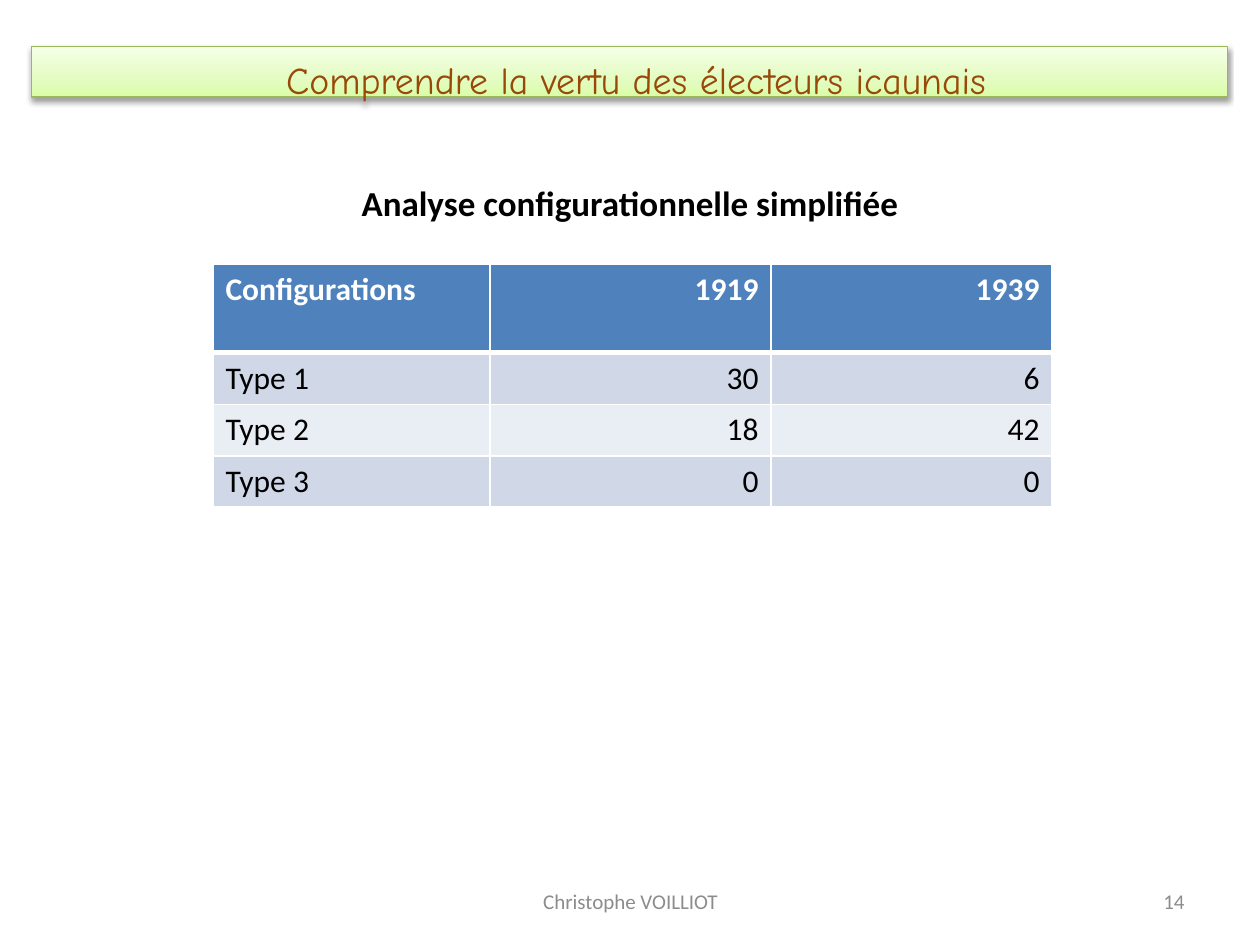
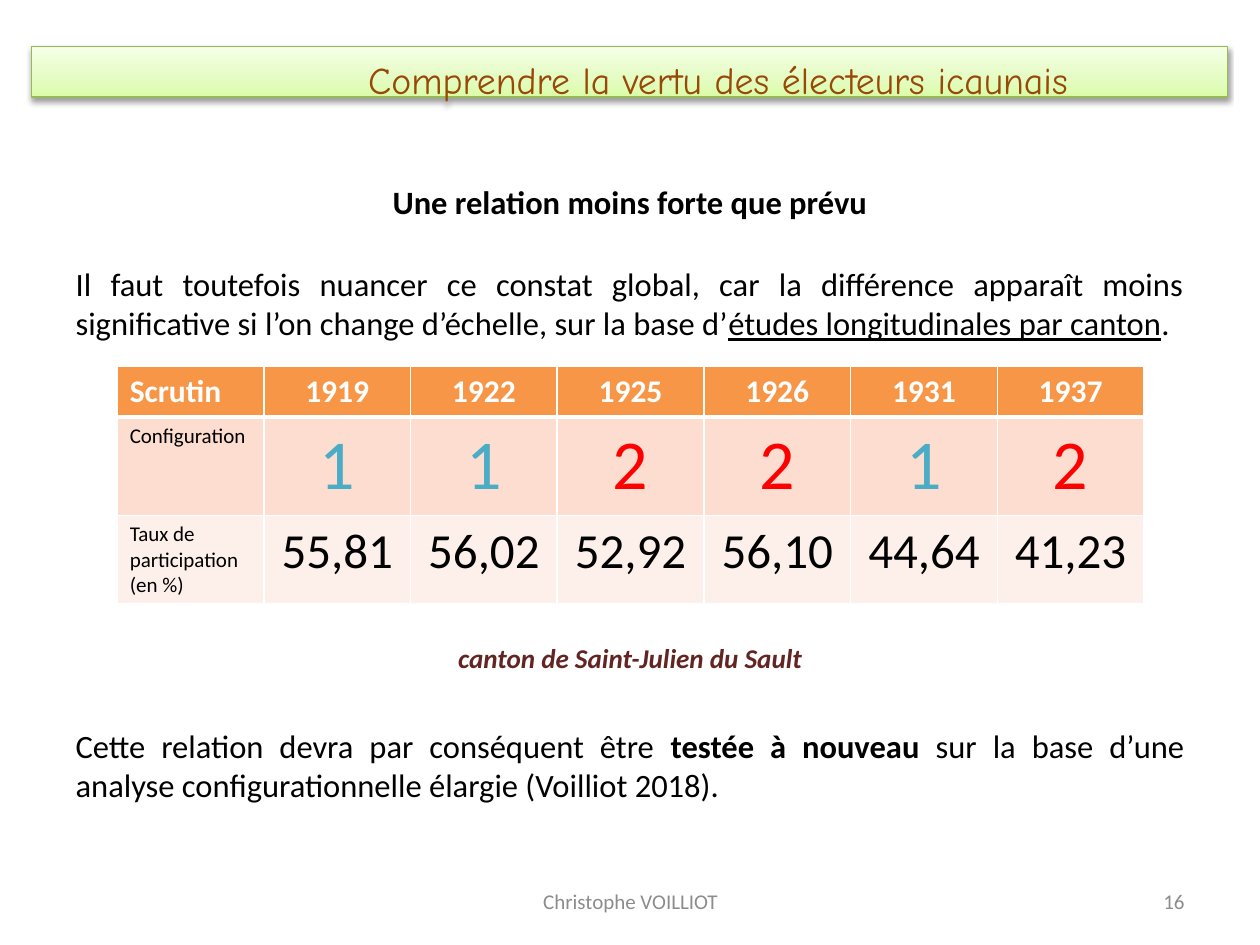
from copy import deepcopy
from dataclasses import dataclass

from pptx import Presentation
from pptx.dml.color import RGBColor
from pptx.enum.text import MSO_ANCHOR, MSO_AUTO_SIZE, PP_ALIGN
from pptx.oxml import parse_xml
from pptx.oxml.ns import nsdecls
from pptx.util import Inches, Pt

LEFT, CENTER, RIGHT, JUSTIFY = PP_ALIGN.LEFT, PP_ALIGN.CENTER, PP_ALIGN.RIGHT, PP_ALIGN.JUSTIFY
TOP, MIDDLE = MSO_ANCHOR.TOP, MSO_ANCHOR.MIDDLE
NO_AUTOFIT = MSO_AUTO_SIZE.NONE
TITLE_AND_CONTENT = 1


@dataclass(frozen=True)
class Theme:
    body_font: str = "Calibri"
    title_font: str = "Comic Neue"
    text: str = "000000"
    white: str = "FFFFFF"
    title: str = "984807"
    footer: str = "8C8C8C"
    caption: str = "632523"
    type_1: str = "4BACC6"
    type_2: str = "FF0000"
    band_line: str = "98B955"
    band_stops: tuple = ((0, "DAFDA7"), (0.35, "E4FCC2"), (1, "F5FFE7"))
    blue_table: tuple = ("4F81BD", "D0D8E8", "E9EDF4")
    orange_table: tuple = ("F79646", "FCDDCF", "FDEFE9")
    title_size: float = 21.6
    heading_size: float = 20
    body_size: float = 18.6
    caption_size: float = 15.5
    table_size: float = 18
    small_size: float = 12
    rate_size: float = 28
    type_size: float = 40


THEME = Theme()
TITLE_BOX = (0.25, 0.37, 9.49, 0.4)
BODY_BOX = (0.5, 1.39, 9, 4.95)
AUTHOR_BOX = (3.42, 6.95, 3.17, 0.4)
NUMBER_BOX = (7.17, 6.95, 2.33, 0.4)


def apply(target, values):
    for name, value in values.items():
        setattr(target, name, value)


def place(shape, box):
    apply(shape, dict(zip(("left", "top", "width", "height"), map(Inches, box))))


def add_run(paragraph, text, size, color=THEME.text, font=THEME.body_font, **styles):
    run = paragraph.add_run()
    run.text = text
    apply(run.font, {"name": font, "size": Pt(size), "bold": False, **styles})
    run.font.color.rgb = RGBColor.from_string(color)


def add_title(slide, text, left_inset):
    """Fill the title placeholder and give it the green shaded band."""
    title = slide.shapes.title
    place(title, TITLE_BOX)
    title.fill.gradient()
    title.fill.gradient_angle = 90
    stops = title.fill.gradient_stops
    first_stop = stops[0]._element
    first_stop.addnext(deepcopy(first_stop))
    for stop, (position, color) in zip(title.fill.gradient_stops, THEME.band_stops):
        stop.position = position
        stop.color.rgb = RGBColor.from_string(color)
    title.line.color.rgb = RGBColor.from_string(THEME.band_line)
    title.line.width = Pt(0.75)
    title._element.spPr.append(parse_xml(
        f'<a:effectLst {nsdecls("a")}><a:outerShdw blurRad="{Pt(3.1)}" dist="{Pt(1.6)}" '
        'dir="5400000" rotWithShape="0"><a:srgbClr val="000000"><a:alpha val="38000"/>'
        '</a:srgbClr></a:outerShdw></a:effectLst>'))
    frame = title.text_frame
    apply(frame, {"auto_size": NO_AUTOFIT, "vertical_anchor": TOP, "word_wrap": True,
                  "margin_left": Inches(left_inset), "margin_right": Inches(0.1),
                  "margin_top": Inches(0.08), "margin_bottom": 0})
    frame.paragraphs[0].alignment = CENTER
    add_run(frame.paragraphs[0], text, THEME.title_size, THEME.title, THEME.title_font)


def add_body(slide, paragraphs):
    """Fill the body with (alignment, points before, runs) paragraphs, unbulleted."""
    body = slide.placeholders[1]
    place(body, BODY_BOX)
    frame = body.text_frame
    apply(frame, {"auto_size": NO_AUTOFIT, "vertical_anchor": TOP, "word_wrap": True})
    for index, (alignment, before, runs) in enumerate(paragraphs):
        paragraph = frame.add_paragraph() if index else frame.paragraphs[0]
        apply(paragraph, {"alignment": alignment, "space_before": Pt(before)})
        properties = paragraph._p.get_or_add_pPr()
        properties.set("marL", "0")
        properties.set("indent", "0")
        properties.append(parse_xml(f'<a:buNone {nsdecls("a")}/>'))
        for text, size, styles in runs:
            add_run(paragraph, text, size, **styles)


def add_footer(slide, number):
    for box, text, alignment in ((AUTHOR_BOX, "Christophe VOILLIOT", CENTER),
                                 (NUMBER_BOX, str(number), RIGHT)):
        frame = slide.shapes.add_textbox(*map(Inches, box)).text_frame
        apply(frame, {"word_wrap": True, "vertical_anchor": MIDDLE})
        frame.paragraphs[0].alignment = alignment
        add_run(frame.paragraphs[0], text, THEME.small_size, THEME.footer)


def set_borders(cell, row):
    """Draw white borders, thicker between the header and the first row."""
    widths = {"L": 1, "R": 1, "T": 3 if row == 1 else 1, "B": 3 if row == 0 else 1}
    for side, width in widths.items():
        cell._tc.get_or_add_tcPr().append(parse_xml(
            f'<a:ln{side} {nsdecls("a")} w="{Pt(width)}"><a:solidFill>'
            f'<a:srgbClr val="{THEME.white}"/></a:solidFill></a:ln{side}>'))


def add_data_table(slide, origin, widths, heights, rows, fills, value_alignment, cell_style):
    """Build a banded table; cell_style(row, column, text) gives size and colour of body cells."""
    box = (*origin, sum(widths), sum(heights))
    table = slide.shapes.add_table(len(rows), len(widths), *map(Inches, box)).table
    for column, width in zip(table.columns, widths):
        column.width = Inches(width)
    for line, height in zip(table.rows, heights):
        line.height = Inches(height)
    header_fill, *band_fills = fills
    for r, values in enumerate(rows):
        fill = band_fills[(r - 1) % 2] if r else header_fill
        for c, text in enumerate(values):
            cell = table.cell(r, c)
            set_borders(cell, r)
            cell.fill.solid()
            cell.fill.fore_color.rgb = RGBColor.from_string(fill)
            paragraph = cell.text_frame.paragraphs[0]
            paragraph.alignment = value_alignment if c else LEFT
            size, color = cell_style(r, c, text) if r else (THEME.table_size, THEME.white)
            add_run(paragraph, text, size, color, bold=r == 0)


def plain_style(row, column, text):
    return THEME.table_size, THEME.text


def canton_style(row, column, text):
    if column == 0:
        return THEME.small_size, THEME.text
    if row == 1:
        return THEME.type_size, THEME.type_1 if text == "1" else THEME.type_2
    return THEME.rate_size, THEME.text


def add_base_slide(deck, number, title_inset, paragraphs):
    slide = deck.slides.add_slide(deck.slide_layouts[TITLE_AND_CONTENT])
    add_title(slide, "Comprendre la vertu des électeurs icaunais", title_inset)
    add_body(slide, paragraphs)
    add_footer(slide, number)
    return slide


def build_configurations_slide(deck):
    heading = ("Analyse configurationnelle simplifiée", THEME.heading_size, {"bold": True})
    slide = add_base_slide(deck, 14, 0.21, [(CENTER, 1, [heading])])
    rows = [("Configurations", "1919", "1939"),
            ("Type 1", "30", "6"),
            ("Type 2", "18", "42"),
            ("Type 3", "0", "0")]
    add_data_table(slide, (1.69, 2.1), (2.2, 2.23, 2.23), (0.7, 0.41, 0.41, 0.4),
                   rows, THEME.blue_table, RIGHT, plain_style)


def build_canton_slide(deck):
    size = THEME.body_size
    paragraphs = [
        (CENTER, 1, [("Une relation moins forte que prévu", size, {"bold": True})]),
        (JUSTIFY, 25, [
            ("Il faut toutefois nuancer ce constat global, car la différence apparaît moins "
             "significative si l’on change d’échelle, sur la base d’", size, {}),
            ("études longitudinales par canton", size, {"underline": True}),
            (".", size, {})]),
        (CENTER, 171, [("canton de Saint-Julien du Sault", THEME.caption_size,
                        {"color": THEME.caption, "bold": True, "italic": True})]),
        (JUSTIFY, 29.5, [
            ("Cette relation devra par conséquent être ", size, {}),
            ("testée à nouveau ", size, {"bold": True}),
            ("sur la base d’une analyse configurationnelle élargie (Voilliot 2018).", size, {})]),
    ]
    slide = add_base_slide(deck, 16, 1.51, paragraphs)
    rows = [("Scrutin", "1919", "1922", "1925", "1926", "1931", "1937"),
            ("Configuration", "1", "1", "2", "2", "1", "2"),
            ("Taux de participation (en %)",
             "55,81", "56,02", "52,92", "56,10", "44,64", "41,23")]
    add_data_table(slide, (0.93, 2.91), [8.15 / 7] * 7, (0.4, 0.78, 0.7),
                   rows, THEME.orange_table, CENTER, canton_style)


def main():
    deck = Presentation()
    deck.slide_width, deck.slide_height = Inches(10), Inches(7.5)
    build_configurations_slide(deck)
    build_canton_slide(deck)
    deck.save("out.pptx")


if __name__ == "__main__":
    main()
